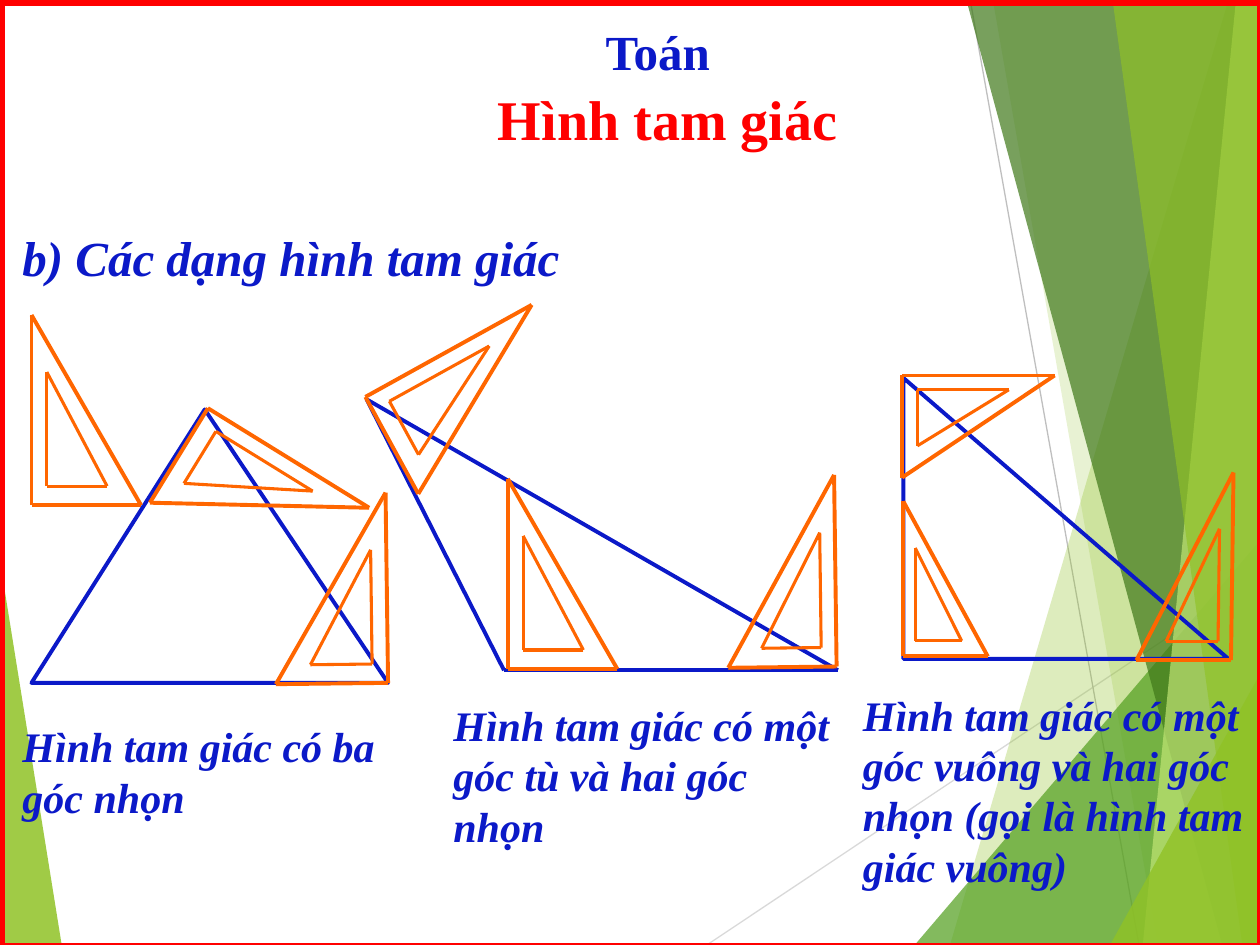
from dataclasses import dataclass
from itertools import pairwise
from typing import NamedTuple

from lxml.etree import SubElement
from pptx import Presentation
from pptx.dml.color import RGBColor
from pptx.enum.shapes import MSO_CONNECTOR, MSO_SHAPE
from pptx.enum.text import MSO_AUTO_SIZE, PP_ALIGN
from pptx.oxml.ns import qn
from pptx.util import Emu, Inches, Pt


@dataclass(frozen=True)
class Theme:
    font: str = "Times New Roman"
    ink: str = "0B19C8"
    accent: str = "FF0000"
    ruler: str = "FF6600"
    lime: str = "90C226"
    pale: str = "C0E474"
    leaf: str = "54A021"
    forest: str = "3F7819"
    light_grey: str = "D9D9D9"
    grey: str = "BFBFBF"
    title_size: float = 32
    heading_size: float = 28
    caption_size: float = 24
    hairline: float = 0.75
    inner_line: float = 1.75
    outline: float = 2.25
    border: float = 4.5


class Point(NamedTuple):
    col: float
    row: float


class Box(NamedTuple):
    col: float
    row: float
    cols: float
    rows: float


class Facet(NamedTuple):
    color: str
    opacity: int
    corners: list[Point]


class SetSquare(NamedTuple):
    right_angle: Point
    long_end: Point
    short_end: Point


class Label(NamedTuple):
    wording: str
    box: Box
    size: float
    color: str
    italic: bool = True
    align: PP_ALIGN = PP_ALIGN.LEFT


THEME = Theme()
COLS, ROWS = 100, 75
CELL = Inches(10) / COLS

LEFT_FACET = Facet(THEME.lime, 85, [Point(-0.1, 43.9), Point(4.9, 75), Point(-0.1, 75)])
RIGHT_FACETS = [
    Facet(THEME.lime, 30, [Point(97.5, 0), Point(75.4, ROWS), Point(COLS, ROWS), Point(COLS, 0)]),
    Facet(THEME.lime, 20, [Point(78.8, 0), Point(91.9, ROWS), Point(COLS, ROWS), Point(COLS, 0)]),
    Facet(THEME.leaf, 72, [Point(72.6, ROWS), Point(COLS, 42.9), Point(COLS, ROWS)]),
    Facet(THEME.forest, 70, [Point(76.7, 0), Point(97, ROWS), Point(COLS, ROWS), Point(COLS, 0)]),
    Facet(THEME.pale, 70, [Point(98.1, 0), Point(90.7, ROWS), Point(COLS, ROWS), Point(COLS, 0)]),
    Facet(THEME.lime, 65, [Point(88.3, 0), Point(98.6, ROWS), Point(COLS, ROWS), Point(99.8, 0)]),
    Facet(THEME.lime, 80, [Point(88.1, ROWS), Point(COLS, 53.5), Point(COLS, ROWS)]),
]

ACUTE_BOX, ACUTE_APEX = Box(2.5, 32.5, 28.3, 21.7), 0.486
RIGHT_BOX, RIGHT_APEX = Box(71.7, 30, 25.8, 22.3), 0
OBTUSE = [Point(29.1, 31.7), Point(40, 53.2), Point(66.5, 53.2)]

SET_SQUARES = [
    SetSquare(Point(30.8, 54.2), Point(30.6, 39.1), Point(21.9, 54.3)),
    SetSquare(Point(16.5, 32.4), Point(29.3, 40.3), Point(11.9, 39.9)),
    SetSquare(Point(66.4, 52.9), Point(66.2, 37.7), Point(57.8, 53)),
    SetSquare(Point(71.6, 29.8), Point(83.7, 29.8), Point(71.6, 37.9)),
    SetSquare(Point(71.7, 52.1), Point(71.7, 39.8), Point(78.4, 52.1)),
    SetSquare(Point(97.7, 52.4), Point(97.9, 37.5), Point(90.2, 52.4)),
    SetSquare(Point(2.5, 40.1), Point(2.5, 25), Point(11.2, 40.1)),
    SetSquare(Point(29, 31.5), Point(42.2, 24.2), Point(33.2, 39.2)),
    SetSquare(Point(40.3, 53.1), Point(40.3, 38), Point(49, 53.1)),
]

LABELS = [
    Label("b) Các dạng hình tam giác", Box(0.8, 17.6, 55.8, 5.7),
          THEME.heading_size, THEME.ink),
    Label("Hình tam giác có ba góc nhọn", Box(0.8, 56.7, 32.5, 9.1),
          THEME.caption_size, THEME.ink),
    Label("Hình tam giác có một góc tù và hai góc nhọn", Box(35, 55, 32.5, 13.1),
          THEME.caption_size, THEME.ink),
    Label("Hình tam giác có một góc vuông và hai góc nhọn (gọi là hình tam giác vuông)",
          Box(67.5, 54.2, 32.5, 17.2), THEME.caption_size, THEME.ink),
]
TITLES = [
    Label("Toán", Box(2.5, 1.2, 99.4, 5.4), THEME.heading_size, THEME.ink,
          False, PP_ALIGN.CENTER),
    Label("Hình tam giác", Box(3, 6.2, 100, 6.4), THEME.title_size, THEME.accent,
          False, PP_ALIGN.CENTER),
]


def cells(count: float) -> Emu:
    return Emu(round(count * CELL))


def place(spot: tuple) -> list[Emu]:
    return [cells(length) for length in spot]


def apply(target, formats: dict) -> None:
    for attribute, setting in formats.items():
        setattr(target, attribute, setting)


def stroke(line, color: str, width: float) -> None:
    line.color.rgb = RGBColor.from_string(color)
    line.width = Pt(width)


def draw_segment(slide, start: Point, end: Point, color: str, width: float) -> None:
    segment = slide.shapes.add_connector(MSO_CONNECTOR.STRAIGHT, *place(start), *place(end))
    stroke(segment.line, color, width)
    SubElement(segment._element.spPr, qn("a:effectLst"))


def draw_sides(slide, corners: list[Point], color: str, width: float) -> None:
    for start, end in pairwise([*corners, corners[0]]):
        draw_segment(slide, start, end, color, width)


def draw_facet(slide, facet: Facet) -> None:
    first, *others = [place(corner) for corner in facet.corners]
    builder = slide.shapes.build_freeform(*first)
    builder.add_line_segments(others, close=True)
    pane = builder.convert_to_shape()
    pane.shadow.inherit = False
    pane.fill.solid()
    pane.fill.fore_color.rgb = RGBColor.from_string(facet.color)
    pane.line.fill.background()
    tint = pane._element.spPr.find(qn("a:solidFill"))[0]
    SubElement(tint, qn("a:alpha"), val=str(facet.opacity * 1000))


def draw_outline(slide, kind: MSO_SHAPE, box: Box, color: str, width: float,
                 apex: float | None = None) -> None:
    figure = slide.shapes.add_shape(kind, *place(box))
    figure.shadow.inherit = False
    figure.fill.background()
    stroke(figure.line, color, width)
    if apex is not None:
        figure.adjustments[0] = apex


def draw_set_square(slide, square: SetSquare) -> None:
    def inside(along_long: float, along_short: float) -> Point:
        return Point(*(corner + along_long * (far - corner) + along_short * (near - corner)
                       for corner, far, near in zip(*square)))

    cutout = [inside(0.1, 0.14), inside(0.7, 0.14), inside(0.1, 0.69)]
    draw_sides(slide, cutout, THEME.ruler, THEME.inner_line)
    draw_sides(slide, list(square), THEME.ruler, THEME.outline)


def write_label(slide, label: Label) -> None:
    frame = slide.shapes.add_textbox(*place(label.box)).text_frame
    apply(frame, {"word_wrap": True, "auto_size": MSO_AUTO_SIZE.SHAPE_TO_FIT_TEXT})
    paragraph = frame.paragraphs[0]
    paragraph.alignment = label.align
    run = paragraph.add_run()
    run.text = label.wording
    apply(run.font, {"name": THEME.font, "size": Pt(label.size),
                     "bold": True, "italic": label.italic})
    run.font.color.rgb = RGBColor.from_string(label.color)


def main() -> None:
    deck = Presentation()
    apply(deck, {"slide_width": cells(COLS), "slide_height": cells(ROWS)})
    slide = deck.slides.add_slide(deck.slide_layouts[6])

    draw_facet(slide, LEFT_FACET)
    draw_segment(slide, Point(56.1, ROWS), Point(COLS, 45.7), THEME.light_grey, THEME.hairline)
    draw_segment(slide, Point(77, 0), Point(90.4, ROWS), THEME.grey, THEME.hairline)
    for facet in RIGHT_FACETS:
        draw_facet(slide, facet)

    for label in LABELS:
        write_label(slide, label)
    draw_outline(slide, MSO_SHAPE.ISOSCELES_TRIANGLE, ACUTE_BOX, THEME.ink, THEME.outline,
                 ACUTE_APEX)
    draw_sides(slide, OBTUSE, THEME.ink, THEME.outline)
    draw_outline(slide, MSO_SHAPE.ISOSCELES_TRIANGLE, RIGHT_BOX, THEME.ink, THEME.outline,
                 RIGHT_APEX)
    for square in SET_SQUARES:
        draw_set_square(slide, square)

    draw_outline(slide, MSO_SHAPE.RECTANGLE, Box(0.1, 0.2, COLS, ROWS), THEME.accent,
                 THEME.border)
    for title in TITLES:
        write_label(slide, title)
    deck.save("out.pptx")


if __name__ == "__main__":
    main()
